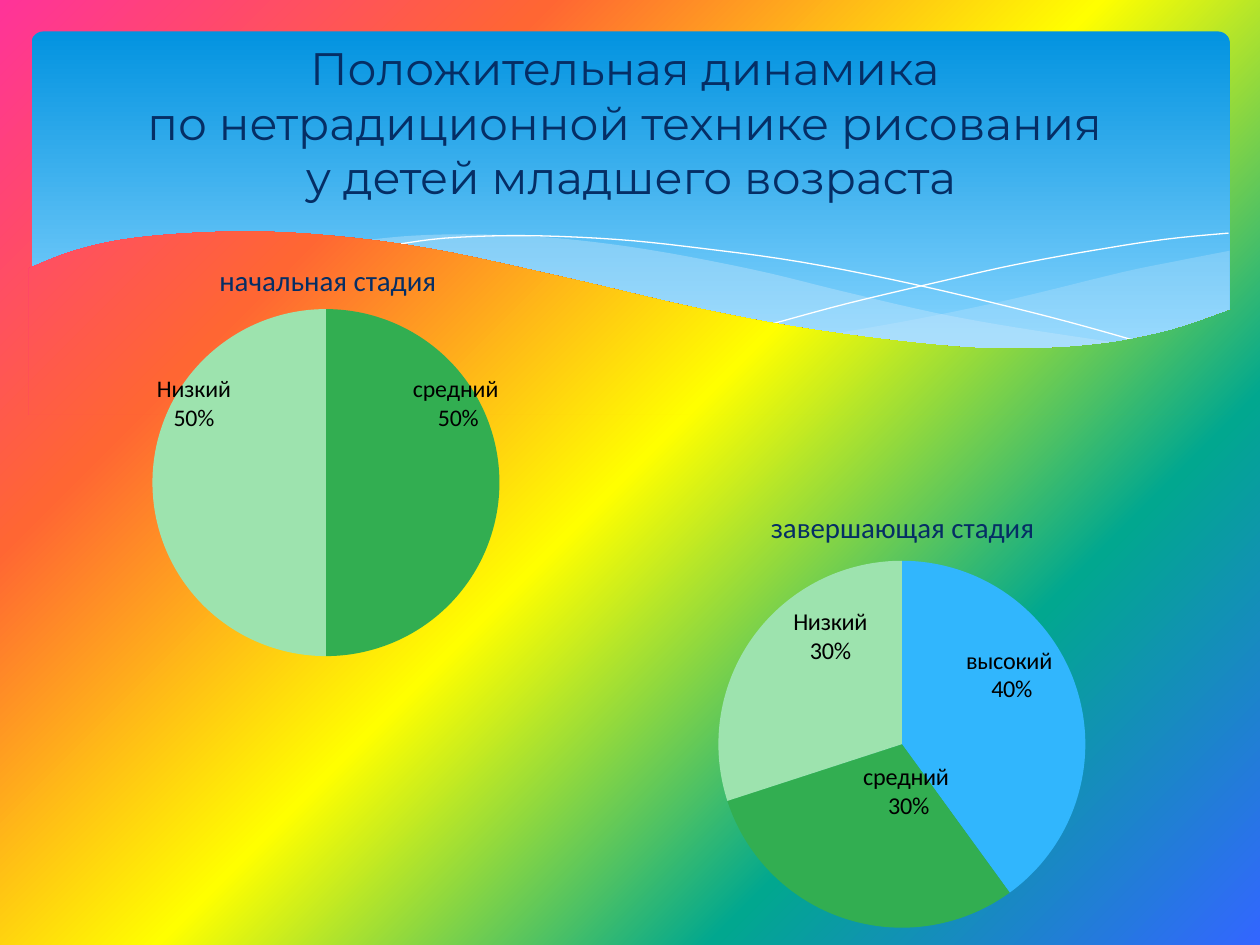
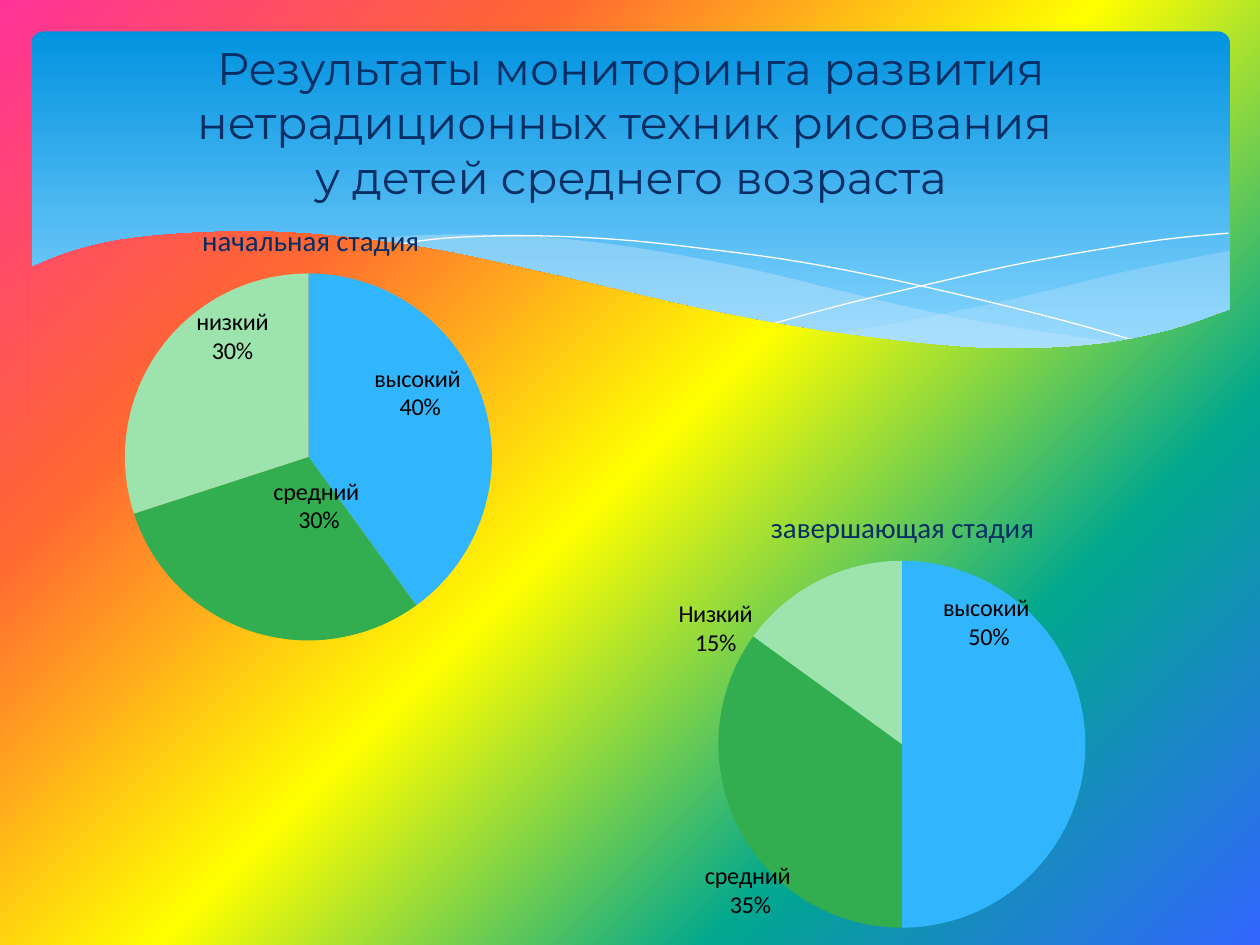
from math import cos, radians, sin

from lxml import etree
from pptx import Presentation
from pptx.chart.data import CategoryChartData
from pptx.dml.color import RGBColor
from pptx.enum.chart import XL_CHART_TYPE, XL_LABEL_POSITION
from pptx.enum.shapes import MSO_SHAPE
from pptx.enum.text import MSO_ANCHOR, MSO_AUTO_SIZE, PP_ALIGN
from pptx.oxml.ns import qn
from pptx.util import Inches, Pt

PIE = XL_CHART_TYPE.PIE
FIT = XL_LABEL_POSITION.BEST_FIT
ROUND = MSO_SHAPE.ROUNDED_RECTANGLE
MID = MSO_ANCHOR.MIDDLE
FIXED = MSO_AUTO_SIZE.NONE
CENTER = PP_ALIGN.CENTER

# Shared look
NAVY, BLACK, WHITE, ICE = "052E65", "000000", "FFFFFF", "C6E7FC"
RAINBOW = [(0, "FF3399"), (25, "FF6633"), (50, "FFFF00"),
           (75, "01A78F"), (100, "3366FF")]
SKY = [(0, "0293E0"), (90, "83D3FE")]
SLICES = ["31B6FD", "32AE51", "9DE3AE"]
LEVELS = ["высокий %", "средний %", "низкий %"]
PLOT = dict(x=0.023, y=0.163, w=0.927, h=0.687)
HEAD = dict(name="Montserrat", size=Pt(26))
NAME = dict(name="Calibri", size=Pt(16.5), bold=False)
BASE = dict(name="Calibri", size=Pt(10))

# Knots of the smooth curves in the band, in inches
EDGE = [(0.23, 2.13), (0.59, 1.99), (1.06, 1.89), (1.77, 1.84), (2.5, 1.86),
        (3.39, 1.97), (4.47, 2.2), (5.55, 2.45), (6.47, 2.62), (7.44, 2.74),
        (8.09, 2.77), (8.75, 2.73), (9.3, 2.62), (9.77, 2.46)]
RIGHT_TOP = [(6.61, 2.65), (7.29, 2.53), (8.05, 2.37), (8.91, 2.16),
             (9.35, 2.07), (9.76, 1.99)]
RIGHT_LOW = [(9.76, 2.47), (9.35, 2.61), (8.89, 2.72), (8.44, 2.77),
             (7.92, 2.77), (7.32, 2.74), (6.61, 2.65)]
LONG_TOP = [(2.86, 1.91), (3.28, 1.87), (3.8, 1.86), (4.42, 1.89),
            (5.14, 1.98), (5.98, 2.14), (6.68, 2.31), (7.41, 2.48),
            (8.07, 2.6), (8.93, 2.73)]
LONG_LOW = [(8.93, 2.73), (8.38, 2.78), (7.85, 2.78), (7.22, 2.74),
            (6.5, 2.64), (5.66, 2.48), (4.91, 2.32), (4.27, 2.16),
            (3.62, 2.03), (2.86, 1.91)]
FALL = [(3.09, 1.95), (3.53, 1.89), (4.16, 1.87), (4.89, 1.9), (5.56, 1.97),
        (6.36, 2.08), (7.27, 2.26), (8.31, 2.51), (9.07, 2.72)]
RISE = [(6.13, 2.57), (6.72, 2.41), (7.48, 2.23), (8.06, 2.1), (8.66, 1.99),
        (9.24, 1.9), (9.75, 1.85)]


def color(code):
    return RGBColor.from_string(code)


def style(font, code, form):
    for key, value in form.items():
        setattr(font, key, value)
    font.color.rgb = color(code)


def place(shape, box):
    for key, value in zip(("left", "top", "width", "height"), box):
        setattr(shape, key, Inches(value))


def blend(fill, root, stops, angle):
    """Fill with a linear gradient that turns clockwise by angle."""
    fill.gradient()
    fill.gradient_angle = 360 - angle
    stop_list = root.xpath(".//a:gradFill/a:gsLst")[0]
    for old in list(stop_list):
        stop_list.remove(old)
    for share, code in stops:
        stop = etree.SubElement(stop_list, qn("a:gs"), pos=str(share * 1000))
        etree.SubElement(stop, qn("a:srgbClr"), val=code)


def curve(knots, steps=5):
    """Catmull-Rom points through the knots."""
    ends = [knots[0], *knots, knots[-1]]
    points = [knots[0]]
    for a, b, c, d in zip(ends, ends[1:], ends[2:], ends[3:]):
        for step in range(1, steps + 1):
            t = step / steps
            points.append(tuple(
                (2 * q + (r - p) * t + (2 * p - 5 * q + 4 * r - s) * t ** 2
                 + (3 * q - p - 3 * r + s) * t ** 3) / 2
                for p, q, r, s in zip(a, b, c, d)))
    return points


def trace(slide, points, close=True):
    spots = [(Inches(x), Inches(y)) for x, y in points]
    pen = slide.shapes.build_freeform(*spots[0])
    pen.add_line_segments(spots[1:], close=close)
    shape = pen.convert_to_shape()
    shape.shadow.inherit = False
    return shape


def veil(slide, points, alpha):
    shape = trace(slide, points)
    shape.fill.solid()
    shape.fill.fore_color.rgb = color(ICE)
    shape.line.fill.background()
    tint = shape.element.xpath("./p:spPr/a:solidFill/a:srgbClr")[0]
    etree.SubElement(tint, qn("a:alpha"), val=str(alpha * 1000))
    return shape


def thread(slide, knots):
    shape = trace(slide, curve(knots), close=False)
    shape.fill.background()
    shape.line.color.rgb = color(WHITE)
    shape.line.width = Pt(0)
    return shape


def cover(slide):
    """Lower part of the band, which lets the background show."""
    shape = trace(slide, curve(EDGE) + [(9.77, 3.29), (0.23, 3.29)])
    shape.line.fill.background()
    shape.element.remove(shape.element.find(qn("p:style")))
    shape.element.set("useBgFill", "1")
    return shape


def dress(master, slide):
    """Build the band on a slide, then move it to the master."""
    blend(master.background.fill, master.element, RAINBOW, 45)
    panel = slide.shapes.add_shape(ROUND, 0, 0, 0, 0)
    place(panel, (0.25, 0.25, 9.51, 2.7))
    panel.adjustments[0] = 0.034
    panel.shadow.inherit = False
    panel.line.fill.background()
    blend(panel.fill, panel.element, SKY, 90)
    parts = [panel,
             veil(slide, curve(RIGHT_TOP) + curve(RIGHT_LOW), 29),
             veil(slide, curve(LONG_TOP) + curve(LONG_LOW), 40),
             thread(slide, FALL), thread(slide, RISE), cover(slide)]
    tree = master.element.cSld.spTree
    for order, part in enumerate(parts):
        part.element.xpath(".//p:cNvPr")[0].set("id", str(100 + order))
        tree.insert(2 + order, part.element)


def head(slide, text, box, foot):
    title = slide.shapes.title
    place(title, box)
    frame = title.text_frame
    frame.auto_size = FIXED
    frame.vertical_anchor = MID
    frame.margin_bottom = Inches(foot)
    frame.text = text
    line = frame.paragraphs[0]
    line.alignment = CENTER
    for run in line.runs:
        style(run.font, NAVY, HEAD)


def lay(node, index, edge=True, inner=False, **spot):
    """Set a manual layout on a chart part."""
    for old in node.findall(qn("c:layout")):
        node.remove(old)
    layout = etree.Element(qn("c:layout"))
    manual = etree.SubElement(layout, qn("c:manualLayout"))
    marks = {"layoutTarget": "inner"} if inner else {}
    if edge:
        marks.update(xMode="edge", yMode="edge")
    marks.update(spot)
    for key, value in marks.items():
        etree.SubElement(manual, qn("c:" + key), val=str(value))
    node.insert(index, layout)


def shift(turn, spot, wide, tall, half):
    """Share of the chart from the outer label place to the spot."""
    ray = PLOT["h"] * tall / 2
    out = (sin(radians(turn)), -cos(radians(turn)))
    moves = []
    for aim, way, size, span in zip(spot, out, half, (wide, tall)):
        side = 0 if abs(way) < 0.08 else (1 if way > 0 else -1)
        start = ray * way + side * size
        moves.append(round((ray * aim - start) / span, 3))
    return dict(zip("xy", moves))


def pie(slide, box, name, values, labels, size, series="", wide=1.9):
    data = CategoryChartData()
    data.categories = LEVELS
    data.add_series(series or name, values)
    chart = slide.shapes.add_chart(PIE, *map(Inches, box), data).chart
    width, height = box[2:]
    style(chart.font, BLACK, BASE)
    chart.has_legend = False

    # Clear ground and fixed plot
    root = chart.element
    ground = etree.Element(qn("c:spPr"))
    etree.SubElement(ground, qn("a:noFill"))
    etree.SubElement(etree.SubElement(ground, qn("a:ln")), qn("a:noFill"))
    root.find(qn("c:txPr")).addprevious(ground)
    lay(root.xpath("./c:chart/c:plotArea")[0], 0, inner=True, **PLOT)

    # Chart title
    chart.has_title = True
    frame = chart.chart_title.text_frame
    frame.text = name
    style(frame.paragraphs[0].runs[0].font, NAVY, NAME)
    lay(root.xpath("./c:chart/c:title")[0], 1,
        x=round(0.5 - wide / 2 / width, 3), y=round(0.23 / height, 3))

    # Slices and labels
    plot = chart.plots[0]
    plot.vary_by_categories = True
    row = plot.series[0]
    row.data_labels.show_value = False
    done = 0
    for index, value in enumerate(values):
        point = row.points[index]
        point.format.fill.solid()
        point.format.fill.fore_color.rgb = color(SLICES[index])
        turn = 360 * (done + value / 2) / sum(values)
        done += value
        if not value:
            continue
        word, spot = labels[index]
        label = point.data_label
        label.text_frame.text = f"{word}\n{value}%"
        for line in label.text_frame.paragraphs:
            style(line.runs[0].font, BLACK, dict(name="Calibri", size=Pt(size)))
        label.position = FIT
        half = (0.31 if index == 2 else 0.36, 0.24)
        node = root.xpath(f".//c:dLbl[c:idx/@val='{index}']")[0]
        lay(node, 1, edge=False, **shift(turn, spot, width, height, half))
    for flag in root.xpath(".//c:showLeaderLines"):
        flag.set("val", "0")


def main():
    deck = Presentation()
    deck.slide_width, deck.slide_height = Inches(10), Inches(7.5)
    young, older = [deck.slides.add_slide(deck.slide_layouts[5])
                    for _ in range(2)]
    dress(deck.slide_master, young)
    first, last = "начальная стадия", "завершающая стадия"
    low_box = (4.76, 3.76, 4.93, 4.24)
    high, fair, low = "высокий ", "средний ", "Низкий"

    # Younger children
    head(young, "Положительная динамика \vпо нетрадиционной технике рисования "
         "\vу детей младшего возраста", (0.51, 0.21, 9, 1.95), 0.48)
    pie(young, (0.33, 1.8, 4.64, 4.01), first, (0, 50, 50),
        [None, (fair, (0.72, -0.45)), (low, (-0.73, -0.45))], 13.6)
    pie(young, low_box, last, (40, 30, 30),
        [(high, (0.56, -0.37)), (fair, (0.05, 0.23)),
         (low, (-0.37, -0.57))], 13.8, wide=2.3)

    # Middle group
    head(older, "Результаты мониторинга развития нетрадиционных техник "
         "рисования \vу детей среднего возраста", (0.51, 0.13, 9, 1.67), 0.05)
    pie(older, (0.05, 1.48, 4.93, 4.24), first, (40, 30, 30),
        [(high, (0.57, -0.34)), (fair, (0.07, 0.24)),
         ("низкий", (-0.4, -0.64))], 13.8, series="Series 1")
    pie(older, low_box, last, (50, 35, 15),
        [(high, (0.43, -0.66)), (fair, (-0.79, 0.79)),
         (low, (-1.01, -0.6))], 13.8, wide=2.3)
    deck.save("out.pptx")


if __name__ == "__main__":
    main()
